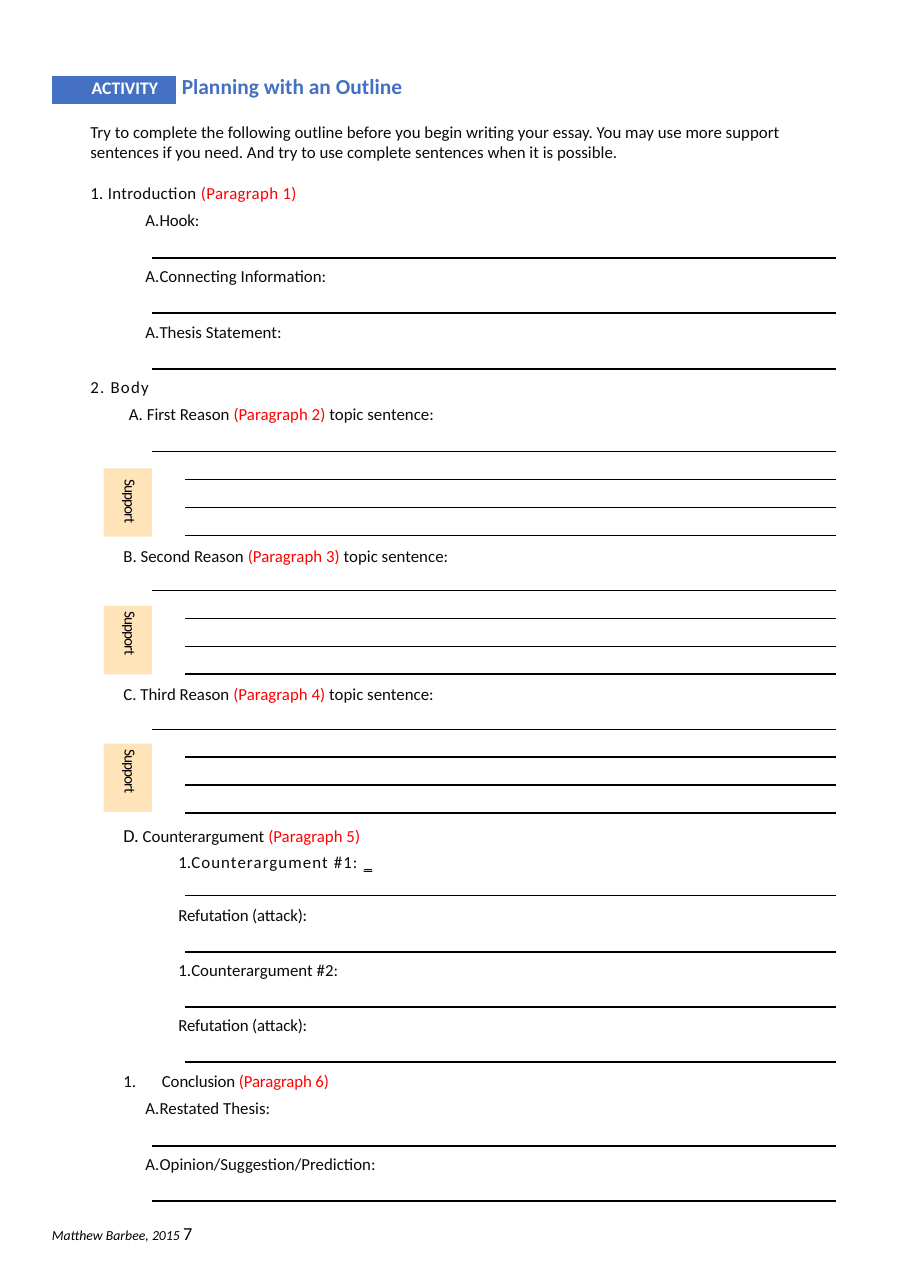
from dataclasses import dataclass
from itertools import product

from lxml.etree import SubElement
from pptx import Presentation
from pptx.dml.color import RGBColor
from pptx.enum.shapes import MSO_CONNECTOR as Link, MSO_SHAPE as Form
from pptx.enum.text import MSO_ANCHOR as Anchor, PP_ALIGN as Align
from pptx.oxml.ns import qn
from pptx.util import Inches, Pt

COLORS = {"ink": "0C0909", "black": "000000", "red": "FF0000",
          "blue": "4471C4", "white": "FFFFFF", "cream": "FFE4B9"}
LEFT, WIDE = 0.47, 7.25
OUTER, INNER, RIGHT = 1.38, 1.68, 7.59


@dataclass
class Run:
    text: str
    color: str = "ink"
    size: float = 11
    gap: float = 0
    font: str = "Calibri"
    bold: bool = False
    slant: bool = False
    under: bool = False


@dataclass
class Para:
    runs: list[Run]
    left: float = 0
    first: float = 0
    line: float = 11
    before: float = 0
    after: float = 0
    mark: str = ""
    align: Align = Align.LEFT


@dataclass
class Block:
    top: float
    high: float
    inset: float
    paras: list[Para]


def shade(name: str) -> RGBColor:
    return RGBColor.from_string(COLORS[name])


def write(frame, paras: list[Para]) -> None:
    for i, para in enumerate(paras):
        item = frame.add_paragraph() if i else frame.paragraphs[0]
        item.alignment = para.align
        item.line_spacing = Pt(para.line)
        item.space_before = Pt(para.before)
        item.space_after = Pt(para.after)
        props = item._p.get_or_add_pPr()
        props.set("marL", str(Inches(para.left)))
        props.set("indent", str(Inches(para.first)))
        if para.mark:
            SubElement(props, qn("a:buAutoNum"), type=para.mark)
        for part in para.runs:
            run = item.add_run()
            run.text = part.text
            font = run.font
            font.name, font.size = part.font, Pt(part.size)
            font.bold, font.italic = part.bold, part.slant
            font.underline = part.under
            font.color.rgb = shade(part.color)
            if part.gap:
                run._r.get_or_add_rPr().set("spc", str(round(part.gap * 100)))


def pad(frame, left: float = 0, top: float = 0, right: float = 0) -> None:
    frame.margin_left, frame.margin_top = Inches(left), Inches(top)
    frame.margin_right, frame.margin_bottom = Inches(right), 0


def add_block(shapes, block: Block) -> None:
    box = shapes.add_textbox(Inches(LEFT), Inches(block.top),
                             Inches(WIDE), Inches(block.high))
    box.text_frame.word_wrap = True
    pad(box.text_frame, top=block.inset, right=0.05)
    write(box.text_frame, block.paras)


def add_rule(shapes, left: float, y: float) -> None:
    rule = shapes.add_connector(Link.STRAIGHT, Inches(left), Inches(y),
                                Inches(RIGHT), Inches(y))
    rule.line.color.rgb = shade("black")
    rule.line.width = Pt(0.95)
    SubElement(rule._element.spPr, qn("a:effectLst"))


def add_tab(shapes, top: float, indent: float) -> None:
    """Draw a sideways Support label."""
    tab = shapes.add_shape(Form.RECTANGLE, Inches(0.94), Inches(top),
                           Inches(0.44), Inches(0.62))
    tab.shadow.inherit = False
    tab.fill.solid()
    tab.fill.fore_color.rgb = shade("cream")
    tab.line.fill.background()
    frame = tab.text_frame
    pad(frame)
    frame.vertical_anchor = Anchor.MIDDLE
    frame._txBody.bodyPr.set("vert", "vert")
    write(frame, [Para([Run("Support", "black", 10, -0.6)], indent, line=8)])


def add_head(shapes) -> None:
    table = shapes.add_table(1, 2, Inches(LEFT), Inches(0.68),
                             Inches(WIDE), Inches(0.27)).table
    table.first_row = table.horz_banding = False
    table.columns[0].width, table.columns[1].width = Inches(1.13), Inches(6.12)
    tag, title = table.cell(0, 0), table.cell(0, 1)
    for cell in (tag, title):
        cell.vertical_anchor = Anchor.MIDDLE
    pad(tag, right=0.13)
    pad(title, left=0.05)
    tag.fill.solid()
    tag.fill.fore_color.rgb = shade("blue")
    title.fill.background()
    write(tag.text_frame, [Para([Run("ACTIVITY ", "white", 11.5, bold=True)],
                                line=12, before=4.6, after=2.2, align=Align.RIGHT)])
    write(title.text_frame, [Para([Run("Planning with an Outline ", "blue", 14, bold=True)],
                                  line=14, before=1.8, after=3.1)])


def red(num: int) -> Run:
    return Run(f" (Paragraph {num})", "red")


def reason(name: str, num: int) -> list[Run]:
    return [Run(name), red(num), Run(" topic sentence:")]


def point(text: str, left: float = 0.7, first: float = 0.15, before: float = 0,
          gap: float = 0, mark: str = "alphaUcPeriod") -> Para:
    return Para([Run(text, gap=gap)], left, first, before=before, mark=mark)


def attack() -> Para:
    return Para([Run("Refutation (attack):", gap=-0.1)], 1.15)


BLOCKS = [
    Block(1.11, 1.22, 0, [
        Para([Run("Try to complete the following outline before you begin writing your "
                  "essay. You may use more support sentences if you need. And try to "
                  "use complete sentences when it is possible.")], 0.35, line=13),
        Para([Run("1. Introduction", gap=0.2),
              Run(" (Paragraph 1)", "red", gap=0.2)], 0.35, before=15.6),
        point("Hook:", before=6.7, gap=-0.1)]),
    Block(2.33, 0.5, 0.11, [point("Connecting Information:")]),
    Block(2.84, 0.5, 0.11, [point("Thesis Statement:")]),
    Block(3.34, 0.54, 0.11, [
        Para([Run("2. Body", gap=0.8)], 0.35),
        Para(reason("A. First Reason", 2), 0.7, before=6.7)]),
    Block(4.94, 0.2, 0.04, [Para(reason("B. Second Reason", 3), 0.65)]),
    Block(6.2, 0.2, 0.04, [Para(reason("C. Third Reason", 4), 0.65)]),
    Block(7.44, 0.68, 0.06, [
        Para([Run("D.", size=12), Run(" Counterargument"), red(5)], 0.65, line=13),
        Para([Run("Counterargument #1: ", gap=0.7),
              Run("_", gap=0.7, font="DejaVu Sans", under=True)],
             1, 0.15, 12, 5, mark="arabicPeriod")]),
    Block(8.13, 0.5, 0.11, [attack()]),
    Block(8.63, 0.5, 0.11, [point("Counterargument #2:", 1, mark="arabicPeriod")]),
    Block(9.13, 0.5, 0.11, [attack()]),
    Block(9.64, 0.76, 0.11, [
        Para([Run("Conclusion", gap=-0.1), Run(" (Paragraph 6)", "red", gap=-0.1)],
             1, -0.35, mark="arabicPeriod"),
        point("Restated Thesis:", 0.65, 0.2, 6.7)]),
    Block(10.39, 0.5, 0.11, [point("Opinion/Suggestion/Prediction:", 0.65, 0.2)]),
    Block(10.9, 0.47, 0.25, [
        Para([Run("Matthew Barbee, 2015 ", "black", 9, slant=True),
              Run("7", "black", 12)], line=13)]),
]


def main() -> None:
    deck = Presentation()
    deck.slide_width, deck.slide_height = Inches(8.27), Inches(11.69)
    shapes = deck.slides.add_slide(deck.slide_layouts[6]).shapes
    add_head(shapes)
    for block in BLOCKS:
        add_block(shapes, block)
    for i, indent in enumerate((0.1, 0.05, 0.05)):
        add_tab(shapes, 4.25 + 1.25 * i, indent)
    for y in (2.34, 2.84, 3.35, 10.4, 10.9):
        add_rule(shapes, OUTER, y)
    for y in (8.13, 8.64, 9.14, 9.64):
        add_rule(shapes, INNER, y)
    for i, row in product(range(3), range(4)):
        add_rule(shapes, INNER if row else OUTER, 4.1 + 1.26 * i + 0.253 * row)
    deck.save("out.pptx")


if __name__ == "__main__":
    main()
